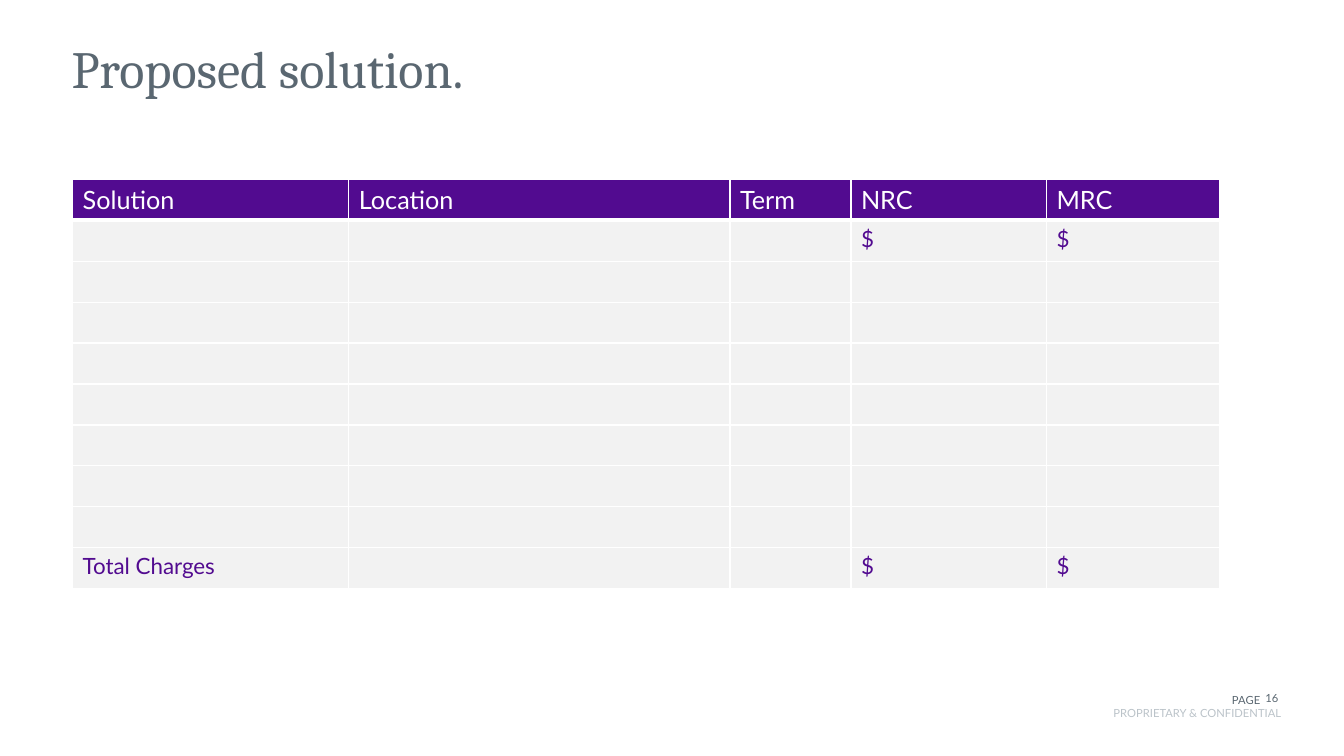
from dataclasses import dataclass

from lxml import etree
from pptx import Presentation
from pptx.dml.color import RGBColor
from pptx.enum.text import MSO_ANCHOR, MSO_AUTO_SIZE, PP_ALIGN
from pptx.oxml.ns import qn
from pptx.util import Inches, Pt

LEFT, RIGHT = PP_ALIGN.LEFT, PP_ALIGN.RIGHT
TOP, BOTTOM = MSO_ANCHOR.TOP, MSO_ANCHOR.BOTTOM
NO_AUTOFIT = MSO_AUTO_SIZE.NONE
TITLE_ONLY = 5


@dataclass(frozen=True)
class Theme:
    heading_font: str = "Cambria"
    body_font: str = "Lato"
    slate: str = "5A6771"
    pale_slate: str = "BBC3C9"
    purple: str = "520B90"
    light_gray: str = "F2F2F2"
    white: str = "FFFFFF"
    title_size: float = 37.3
    header_size: float = 18
    cell_size: float = 16
    footer_size: float = 8


THEME = Theme()
COLUMN_WIDTHS = [2.74, 3.78, 1.2, 1.94, 1.72]
HEADERS = ["Solution", "Location", "Term", "NRC", "MRC"]
FIRST_ITEM = ["", "", "", "$", "$"]
TOTALS = ["Total Charges", "", "", "$", "$"]
BLANK_ROWS = 7
ROWS = [HEADERS, FIRST_ITEM] + [[""] * len(HEADERS)] * BLANK_ROWS + [TOTALS]


def write_text(frame, text, size, color, font=THEME.body_font, align=LEFT):
    frame.text = text
    para = frame.paragraphs[0]
    para.alignment = align
    for span in para.runs:
        span.font.name = font
        span.font.size = Pt(size)
        span.font.bold = False
        span.font.color.rgb = RGBColor.from_string(color)


def set_margins(frame, vertical=0):
    frame.margin_left = frame.margin_right = 0
    frame.margin_top = frame.margin_bottom = Inches(vertical)


def add_title(page, left, top, width, height):
    title = page.shapes.title
    title.left, title.top = Inches(left), Inches(top)
    title.width, title.height = Inches(width), Inches(height)
    frame = title.text_frame
    write_text(frame, "Proposed solution.", THEME.title_size, THEME.slate, THEME.heading_font)
    set_margins(frame, 0.05)
    frame.auto_size = NO_AUTOFIT
    frame.vertical_anchor = TOP
    frame.paragraphs[0].line_spacing = 0.9


def set_borders(cell, bottom_width):
    properties = cell._tc.get_or_add_tcPr()
    widths = {"lnL": 1, "lnR": 1, "lnT": 1, "lnB": bottom_width}
    for position, (side, width) in enumerate(widths.items()):
        line = etree.Element(qn(f"a:{side}"), w=str(Pt(width)))
        fill = etree.SubElement(line, qn("a:solidFill"))
        etree.SubElement(fill, qn("a:srgbClr"), val=THEME.white)
        properties.insert(position, line)


def add_price_table(page, left, top, height):
    frame = page.shapes.add_table(
        len(ROWS), len(HEADERS), Inches(left), Inches(top),
        Inches(sum(COLUMN_WIDTHS)), Inches(height))
    table = frame.table
    table.horz_banding = False
    for column, width in zip(table.columns, COLUMN_WIDTHS):
        column.width = Inches(width)
    for row_index, row in enumerate(ROWS):
        is_header = row_index == 0
        size = THEME.header_size if is_header else THEME.cell_size
        color = THEME.white if is_header else THEME.purple
        fill = THEME.purple if is_header else THEME.light_gray
        for column_index, text in enumerate(row):
            cell = table.cell(row_index, column_index)
            write_text(cell.text_frame, text, size, color)
            cell.fill.solid()
            cell.fill.fore_color.rgb = RGBColor.from_string(fill)
            set_borders(cell, 3 if is_header else 1)


def add_footer(page, left, top):
    labels = [
        ("PROPRIETARY & CONFIDENTIAL", 0, 0.21, 2.79, 0.13, TOP, THEME.pale_slate),
        ("PAGE", 2.12, 0.02, 0.46, 0.19, BOTTOM, THEME.slate),
        ("16", 2.49, 0, 0.27, 0.19, BOTTOM, THEME.slate),
    ]
    for text, x, y, width, height, anchor, color in labels:
        box = page.shapes.add_textbox(
            Inches(left + x), Inches(top + y), Inches(width), Inches(height))
        frame = box.text_frame
        frame.word_wrap = True
        frame.vertical_anchor = anchor
        set_margins(frame)
        write_text(frame, text, THEME.footer_size, color, align=RIGHT)


def main():
    deck = Presentation()
    deck.slide_width, deck.slide_height = Inches(13.33), Inches(7.5)
    page = deck.slides.add_slide(deck.slide_layouts[TITLE_ONLY])
    add_title(page, 0.71, 0.38, 12, 1.4)
    add_price_table(page, 0.72, 1.78, 4.06)
    add_footer(page, 9.92, 6.8)
    deck.save("out.pptx")


if __name__ == "__main__":
    main()
